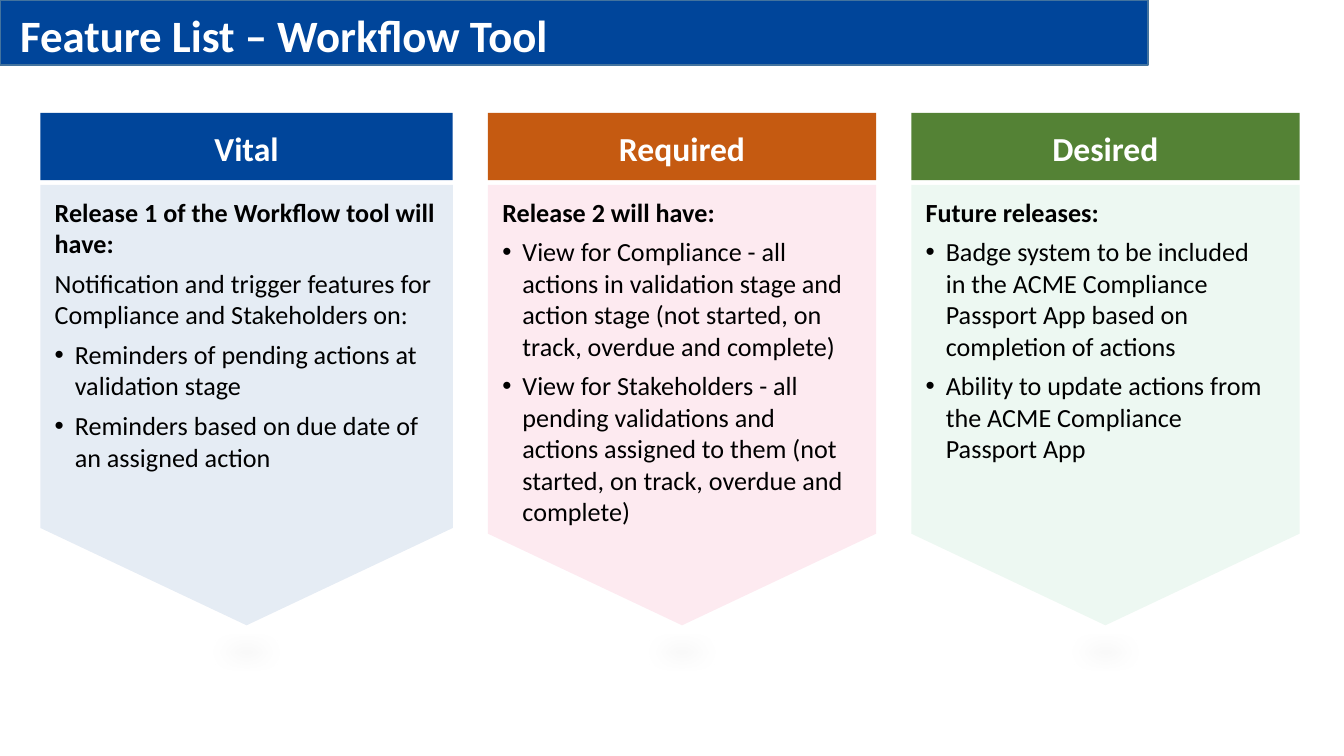
from lxml.etree import SubElement
from pptx import Presentation
from pptx.dml.color import RGBColor
from pptx.enum.shapes import MSO_SHAPE
from pptx.enum.text import MSO_ANCHOR, PP_ALIGN
from pptx.oxml.ns import qn
from pptx.util import Pt

FONT = "Calibri"
BLUE = RGBColor(0x00, 0x45, 0x9A)
BAR_LINE = RGBColor(0x43, 0x73, 0x9E)
ORANGE = RGBColor(0xC5, 0x5A, 0x11)
GREEN = RGBColor(0x54, 0x82, 0x35)
PINK = RGBColor(0xEE, 0x32, 0x75)
MINT = RGBColor(0x58, 0xBE, 0x85)
GREY = RGBColor(0xBF, 0xBF, 0xBF)
WHITE = RGBColor(0xFF, 0xFF, 0xFF)
BLACK = RGBColor(0x00, 0x00, 0x00)

HEADER_TOP, HEADER_H = 60.5, 36
BODY_TOP, BODY_H = 99, 236
SHADOW_TOP, SHADOW_W, SHADOW_H = 339, 139, 21

# heading, header colour, body tint, left, width, text width, lead lines, bullets
COLUMNS = [
    ("Vital", BLUE, BLUE, 21.6, 221, 220,
     ["Release 1 of the Workflow tool will have:",
      "Notification and trigger features for Compliance and Stakeholders on:"],
     ["Reminders of pending actions at validation stage",
      "Reminders based on due date of an assigned action"]),
    ("Required", ORANGE, PINK, 261.4, 208, 199,
     ["Release 2 will have:"],
     ["View for Compliance - all actions in validation stage and action stage "
      "(not started, on track, overdue and complete)",
      "View for Stakeholders - all pending validations and actions assigned to "
      "them (not started, on track, overdue and complete)"]),
    ("Desired", GREEN, MINT, 488.2, 208, 196,
     ["Future releases:"],
     ["Badge system to be included in the ACME Compliance Passport App based on "
      "completion of actions",
      "Ability to update actions from the ACME Compliance Passport App"]),
]


def add_shape(slide, kind, left, top, width, height, color):
    sp = slide.shapes.add_shape(kind, Pt(left), Pt(top), Pt(width), Pt(height))
    sp.shadow.inherit = False
    sp.fill.solid()
    sp.fill.fore_color.rgb = color
    sp.line.fill.background()
    return sp


def set_font(p, size, color, bold):
    for r in p.runs:
        r.font.name = FONT
        r.font.size = Pt(size)
        r.font.bold = bold
        r.font.color.rgb = color


def add_title(slide, text):
    title = slide.shapes.title
    bar = add_shape(slide, MSO_SHAPE.RECTANGLE, 0, 0, 615, 34.8, BLUE)
    bar.line.color.rgb = BAR_LINE
    bar.line.width = Pt(1)
    title._element.addprevious(bar._element)
    title.left, title.top, title.width, title.height = Pt(5.8), Pt(0.7), Pt(714), Pt(39)
    tf = title.text_frame
    tf.text = text
    tf.vertical_anchor = MSO_ANCHOR.MIDDLE
    tf.margin_left = tf.margin_right = Pt(5)
    tf.margin_top = tf.margin_bottom = Pt(3)
    p = tf.paragraphs[0]
    p.alignment = PP_ALIGN.LEFT
    p.line_spacing = 0.9
    set_font(p, 24, WHITE, True)


def add_header(slide, text, left, width, color):
    sp = add_shape(slide, MSO_SHAPE.RECTANGLE, left, HEADER_TOP, width, HEADER_H, color)
    tf = sp.text_frame
    tf.text = text
    tf.vertical_anchor = MSO_ANCHOR.MIDDLE
    tf.margin_top, tf.margin_bottom = Pt(5), Pt(3)
    p = tf.paragraphs[0]
    p.alignment = PP_ALIGN.CENTER
    set_font(p, 18, WHITE, True)


def add_down_panel(slide, left, width, tint):
    """Pentagon turned to point down, so its unrotated frame is on its side."""
    sp = add_shape(slide, MSO_SHAPE.PENTAGON, left + (width - BODY_H) / 2,
                   BODY_TOP + (BODY_H - width) / 2, BODY_H, width, tint)
    sp.rotation = 90
    sp.adjustments[0] = 0.236
    color = sp.fill._xPr.find(qn("a:solidFill"))[0]
    SubElement(color, qn("a:alpha"), val="10000")


def add_soft_shadow(slide, center):
    sp = add_shape(slide, MSO_SHAPE.OVAL, center - SHADOW_W / 2, SHADOW_TOP,
                   SHADOW_W, SHADOW_H, GREY)
    effects = sp._element.spPr.find(qn("a:effectLst"))
    SubElement(effects, qn("a:softEdge"), rad=str(Pt(10)))


def add_bullet(p):
    pPr = p._p.get_or_add_pPr()
    pPr.set("marL", str(Pt(10.8)))
    pPr.set("indent", str(-Pt(10.8)))
    SubElement(pPr, qn("a:buFont"), typeface="Arial")
    SubElement(pPr, qn("a:buChar"), char="•")


def add_feature_text(slide, left, width, leads, bullets):
    box = slide.shapes.add_textbox(Pt(left), Pt(101.5), Pt(width), Pt(200))
    tf = box.text_frame
    tf.word_wrap = True
    for i, text in enumerate(leads + bullets):
        p = tf.paragraphs[0] if i == 0 else tf.add_paragraph()
        p.text = text
        p.space_after = Pt(4.5)
        if i >= len(leads):
            add_bullet(p)
        set_font(p, 14, BLACK, i == 0)


def main():
    prs = Presentation()
    prs.slide_width, prs.slide_height = Pt(720), Pt(405)
    slide = prs.slides.add_slide(prs.slide_layouts[5])
    add_title(slide, "Feature List – Workflow Tool")
    for heading, color, tint, left, width, text_width, leads, bullets in COLUMNS:
        add_down_panel(slide, left, width, tint)
        add_feature_text(slide, left + 0.6, text_width, leads, bullets)
        add_header(slide, heading, left, width, color)
        add_soft_shadow(slide, left + width / 2)
    prs.save("out.pptx")


if __name__ == "__main__":
    main()
